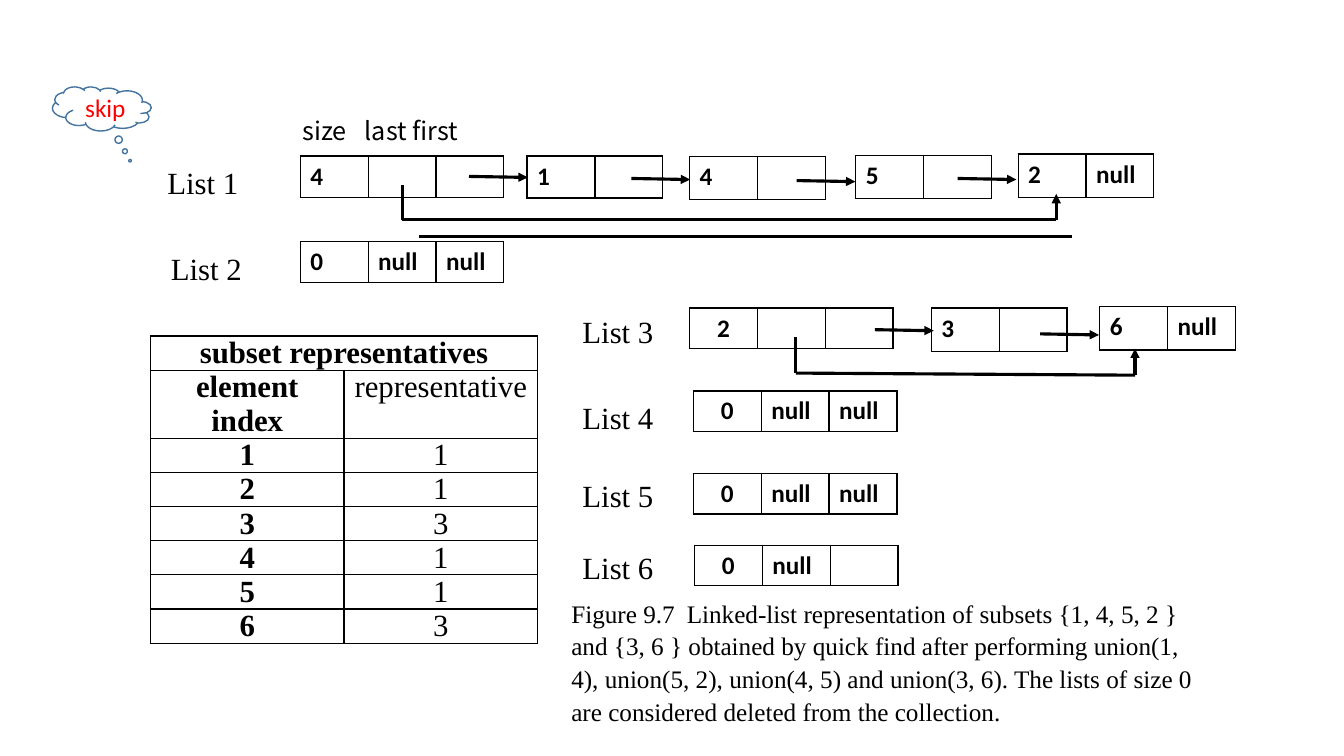
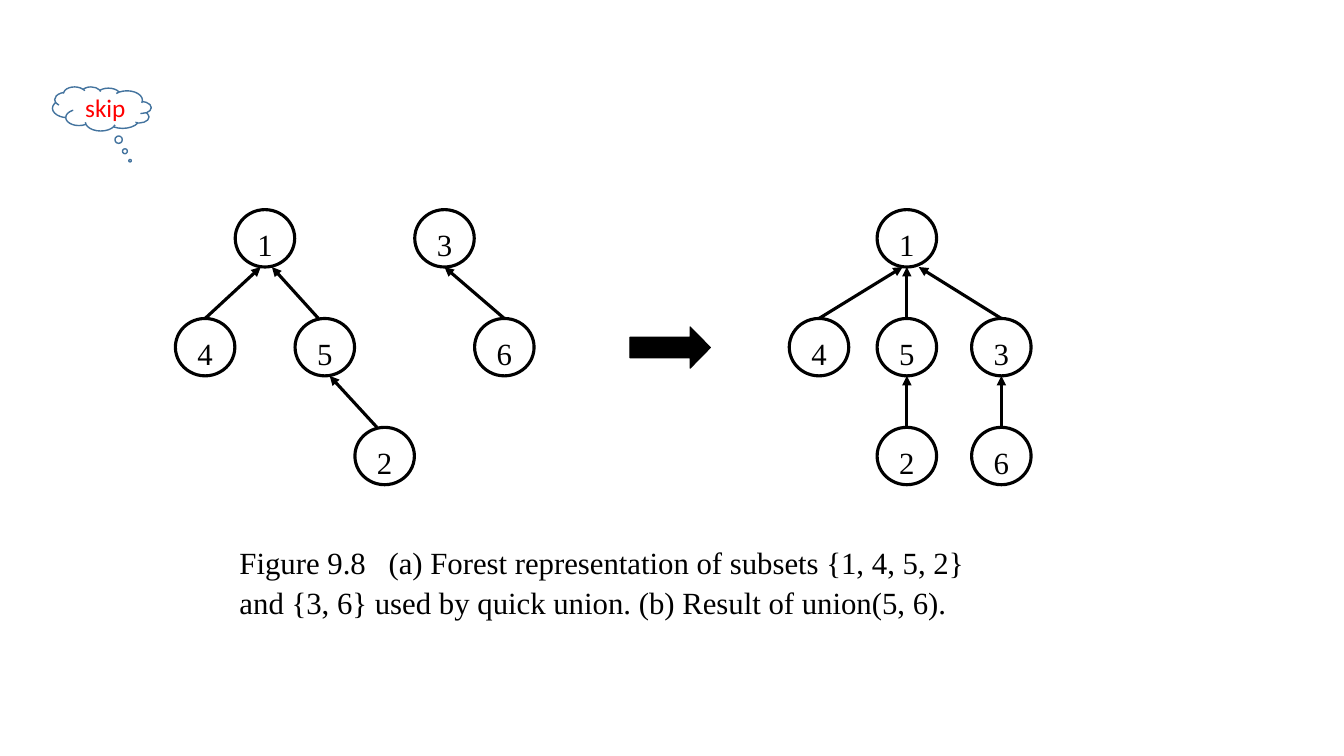
from lxml import etree
from pptx import Presentation
from pptx.dml.color import RGBColor
from pptx.enum.shapes import MSO_CONNECTOR as Connector, MSO_SHAPE as Shape
from pptx.enum.text import MSO_ANCHOR as Anchor, PP_ALIGN as Align
from pptx.oxml.ns import qn
from pptx.util import Pt

BLACK = RGBColor(0x00, 0x00, 0x00)
WHITE = RGBColor(0xFF, 0xFF, 0xFF)
RED = RGBColor(0xFF, 0x00, 0x00)
BLUE = RGBColor(0x43, 0x73, 0x9E)
SERIF, SANS, HEADING = "Times New Roman", "Calibri", "Noto Sans CJK SC"


class Deck:
    """Holds the shared style and the slide being filled."""

    serif_spacing = 1.08
    stroke = 2.25
    node_width, node_height = 42.5, 41
    cell_width = 48.5

    def __init__(self):
        self.file = Presentation()
        self.file.slide_width, self.file.slide_height = Pt(960), Pt(540)
        self.page = None

    def new_page(self):
        self.page = self.file.slides.add_slide(self.file.slide_layouts[6])

    def fill_text(self, frame, text, font=SERIF, size=22, color=BLACK, bold=False,
                  align=Align.LEFT, spacing=None, tab=None):
        frame.text = text
        para = frame.paragraphs[0]
        para.alignment = align
        if spacing:
            para.line_spacing = spacing
        if tab:
            stops = etree.SubElement(para._p.get_or_add_pPr(), qn("a:tabLst"))
            etree.SubElement(stops, qn("a:tab"), pos=str(Pt(tab)), algn="l")
        for span in para.runs:
            span.font.name, span.font.size = font, Pt(size)
            span.font.bold, span.font.color.rgb = bold, color

    def shape(self, kind, left, top, width, height, fill=WHITE, line=WHITE, weight=0.75):
        box = self.page.shapes.add_shape(kind, Pt(left), Pt(top), Pt(width), Pt(height))
        box.shadow.inherit = False
        box.fill.solid()
        box.fill.fore_color.rgb = fill
        box.line.color.rgb, box.line.width = line, Pt(weight)
        box.text_frame.vertical_anchor = Anchor.TOP
        return box

    def label(self, left, top, text):
        box = self.shape(Shape.RECTANGLE, left, top, 72, 36)
        self.fill_text(box.text_frame, text, spacing=self.serif_spacing)

    def node(self, left, top, text):
        circle = self.shape(Shape.OVAL, left, top, self.node_width, self.node_height,
                            line=BLACK, weight=self.stroke)
        self.fill_text(circle.text_frame, text, align=Align.CENTER,
                       spacing=self.serif_spacing)
        return circle

    def text(self, left, top, width, height, text, **style):
        box = self.page.shapes.add_textbox(Pt(left), Pt(top), Pt(width), Pt(height))
        box.text_frame.word_wrap = True
        self.fill_text(box.text_frame, text, **style)

    def skip_cloud(self):
        cloud = self.shape(Shape.CLOUD_CALLOUT, 37.5, 62, 70.5, 31.5, line=BLUE, weight=1)
        cloud.adjustments[0], cloud.adjustments[1] = -0.286, 1.176
        cloud.element.spPr.get_or_add_xfrm().set("flipH", "1")
        cloud.text_frame.vertical_anchor = Anchor.MIDDLE
        self.fill_text(cloud.text_frame, "skip", SANS, 18, RED, align=Align.CENTER)

    def line(self, start, end, arrow=True):
        link = self.page.shapes.add_connector(
            Connector.STRAIGHT, *(Pt(value) for value in (*start, *end)))
        link.line.color.rgb, link.line.width = BLACK, Pt(self.stroke)
        if arrow:
            outline = link.element.spPr.find(qn("a:ln"))
            etree.SubElement(outline, qn("a:tailEnd"), type="triangle")
        etree.SubElement(link.element.spPr, qn("a:effectLst"))
        return link

    def route(self, *points):
        """Draw joined segments with an arrowhead on the last one."""
        last = len(points) - 2
        for index, (start, end) in enumerate(zip(points, points[1:])):
            self.line(start, end, arrow=index == last)

    def grid(self, left, top, widths, heights):
        frame = self.page.shapes.add_table(len(heights), len(widths), Pt(left), Pt(top),
                                           Pt(sum(widths)), Pt(sum(heights)))
        table = frame.table
        table.first_row = table.horz_banding = False
        for column, width in zip(table.columns, widths):
            column.width = Pt(width)
        for row, height in zip(table.rows, heights):
            row.height = Pt(height)
        for cell in table.iter_cells():
            props = cell._tc.get_or_add_tcPr()
            for side in ("a:lnL", "a:lnR", "a:lnT", "a:lnB"):
                border = etree.SubElement(props, qn(side), w=str(Pt(1)))
                solid = etree.SubElement(border, qn("a:solidFill"))
                etree.SubElement(solid, qn("a:srgbClr"), val=str(BLACK))
            cell.fill.solid()
            cell.fill.fore_color.rgb = WHITE
        return table

    def record(self, left, top, height, values, center_first=False):
        """Draw one list header or list node as a row of fields."""
        table = self.grid(left, top, [self.cell_width] * len(values), [height])
        for index, value in enumerate(values):
            if value:
                centered = center_first and index == 0
                self.fill_text(table.cell(0, index).text_frame, value, SANS, 18, bold=True,
                               align=Align.CENTER if centered else Align.LEFT)


def linked_lists(deck):
    deck.new_page()

    # Representatives table
    rows = [("subset representatives", ""), ("element index", "representative"),
            ("1", "1"), ("2", "1"), ("3", "3"), ("4", "1"), ("5", "1"), ("6", "3")]
    line_height = 24.25
    heights = [line_height * (2 if index == 1 else 1) for index in range(len(rows))]
    table = deck.grid(107.5, 240, [138.25] * 2, heights)
    table.cell(0, 0).merge(table.cell(0, 1))
    for row_index, row in enumerate(rows):
        for column, value in enumerate(row):
            cell = table.cell(row_index, column)
            cell.margin_left = cell.margin_right = Pt(5)
            cell.margin_top = cell.margin_bottom = 0
            if value:
                deck.fill_text(cell.text_frame, value, bold=column == 0, align=Align.CENTER)

    # List headers and nodes
    deck.text(209, 79, 137.5, 29, "size\tlast first", font=HEADING, size=18, tab=44.5)
    for left, top, height, values in [
        (214.5, 111.5, 29.5, ("4", "", "")),
        (376.5, 111.5, 30, ("1", "")),
        (492.5, 111.75, 31, ("4", "")),
        (611.25, 111, 31, ("5", "")),
        (727.25, 110, 31, ("2", "null")),
        (214.5, 172.5, 29.5, ("0", "null", "null")),
        (665.25, 220, 31, ("3", "")),
        (785.5, 219, 31, ("6", "null")),
    ]:
        deck.record(left, top, height, values)
    for left, top, values in [
        (492.5, 220, ("2", "", "")),
        (495.25, 279.25, ("0", "null", "null")),
        (495.25, 338.25, ("0", "null", "null")),
        (496, 389.5, ("0", "null", "")),
    ]:
        deck.record(left, top, 28.5, values, center_first=True)

    # List names
    places = [(112.5, 111.5), (115, 172.5), (409, 217.5), (409, 279.5), (409, 335), (409, 386)]
    for number, (left, top) in enumerate(places, 1):
        deck.label(left, top, f"List {number}")

    # Pointers to the next node
    for left, top in [(335, 126), (451, 127.5), (569, 129), (684, 127.5),
                      (743, 238.5), (625, 235.5)]:
        deck.line((left, top), (left + 42, top + 0.75))

    # Pointers to the last node
    deck.route((287.5, 132), (287.5, 157), (754.5, 157), (754.5, 138.5))
    deck.route((568.5, 241), (568.5, 266.5), (810.75, 268), (810.75, 249))
    deck.line((299.5, 169), (766, 169), arrow=False)

    deck.text(401, 422, 470, 94,
              "Figure 9.7\tLinked-list representation of subsets {1, 4, 5, 2 } and {3, 6 } "
              "obtained by quick find after performing union(1, 4), union(5, 2), union(4, 5) "
              "and union(3, 6). The lists of size 0 are considered deleted from the collection.",
              size=18, spacing=deck.serif_spacing, tab=82.5)
    deck.skip_cloud()


def tree(deck, places, edges):
    """Draw nodes at (left, level), then edges as child, parent and two offsets."""
    nodes = {name: deck.node(left, 149.75 + 77.75 * level, name)
             for name, (left, level) in places.items()}
    for child, parent, start_shift, end_shift in edges:
        lower, upper = nodes[child], nodes[parent]
        start = ((lower.left + lower.width / 2) / Pt(1) + start_shift, lower.top / Pt(1))
        end = ((upper.left + upper.width / 2) / Pt(1) + end_shift,
               (upper.top + upper.height) / Pt(1))
        link = deck.line(start, end)
        if start_shift == 0:
            link.begin_connect(lower, 0)


def forests(deck):
    deck.new_page()

    # Forest before the union
    columns = [125.25 + 42.75 * index for index in range(6)]
    tree(deck,
         {"1": (columns[1], 0), "4": (columns[0], 1), "5": (columns[2], 1),
          "2": (columns[3], 2), "3": (columns[4], 0), "6": (columns[5], 1)},
         [("6", "3", 0, 0), ("5", "1", -4.5, 5), ("2", "5", -5.5, 3.5), ("4", "1", 0, -3)])

    # Tree after the union
    left, middle, right = 563.75, 626.5, 694
    tree(deck,
         {"1": (middle, 0), "4": (left, 1), "5": (middle, 1),
          "2": (middle, 2), "3": (right, 1), "6": (right, 2)},
         [("3", "1", 0, 8.5), ("4", "1", 0, -3), ("5", "1", 0, 0),
          ("2", "5", 0, 0), ("6", "3", 0, 0)])

    # Step arrow and caption
    arrow = deck.shape(Shape.RIGHT_ARROW, 450, 233.5, 57.5, 29.5, fill=BLACK, line=BLACK)
    arrow.adjustments[0], arrow.adjustments[1] = 0.5, 0.49
    deck.text(164, 383, 551, 60.5,
              "Figure 9.8\t(a) Forest representation of subsets {1, 4, 5, 2} and {3, 6} "
              "used by quick union. (b) Result of union(5, 6).",
              spacing=deck.serif_spacing, tab=106.5)
    deck.skip_cloud()


def main():
    deck = Deck()
    linked_lists(deck)
    forests(deck)
    deck.file.save("out.pptx")


if __name__ == "__main__":
    main()
